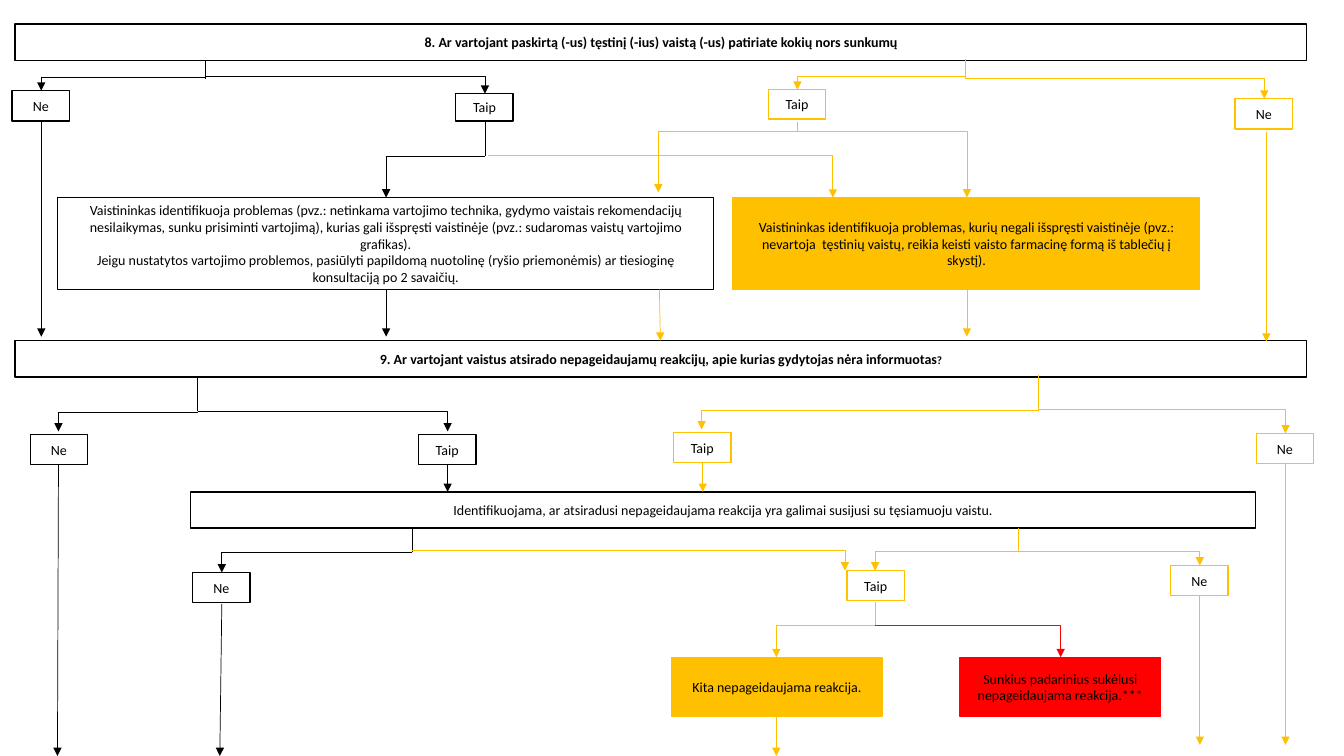
import pptx
import pptx.util
import pptx.dml.color
import pptx.enum.shapes
import pptx.enum.text
import pptx.oxml
import pptx.oxml.ns
from pptx.util import Inches

BLACK = pptx.dml.color.RGBColor(0x00, 0x00, 0x00)
WHITE = pptx.dml.color.RGBColor(0xFF, 0xFF, 0xFF)
AMBER = pptx.dml.color.RGBColor(0xFF, 0xC0, 0x00)
RED = pptx.dml.color.RGBColor(0xFF, 0x00, 0x00)

presentation = pptx.Presentation()
presentation.slide_width = Inches(13.33)
presentation.slide_height = Inches(7.5)
slide = presentation.slides.add_slide(presentation.slide_layouts[6])


def add_box(text, left, top, width, height, border, fill=WHITE, bold=False):
    shape = slide.shapes.add_shape(
        pptx.enum.shapes.MSO_SHAPE.RECTANGLE,
        Inches(left), Inches(top), Inches(width), Inches(height))
    shape.shadow.inherit = False
    shape.fill.solid()
    shape.fill.fore_color.rgb = fill
    shape.line.color.rgb = border
    shape.line.width = pptx.util.Pt(1)
    frame = shape.text_frame
    frame.word_wrap = True
    frame.vertical_anchor = pptx.enum.text.MSO_ANCHOR.MIDDLE
    frame.text = text
    for paragraph in frame.paragraphs:
        paragraph.alignment = pptx.enum.text.PP_ALIGN.CENTER
        paragraph.font.name = "Calibri"
        paragraph.font.size = pptx.util.Pt(10)
        paragraph.font.bold = bold
        paragraph.font.color.rgb = BLACK
    return shape


def add_link(color, x1, y1, x2, y2, arrow=True, corner=False):
    kinds = pptx.enum.shapes.MSO_CONNECTOR
    connector = slide.shapes.add_connector(
        kinds.ELBOW if corner else kinds.STRAIGHT,
        Inches(x1), Inches(y1), Inches(x2), Inches(y2))
    connector.line.color.rgb = color
    connector.line.width = pptx.util.Pt(0.5)
    properties = connector._element.spPr
    if corner:  # one turn: across, then down
        properties.find(pptx.oxml.ns.qn("a:prstGeom")).set("prst", "bentConnector2")
    if arrow:
        tail = pptx.oxml.parse_xml(
            f'<a:tailEnd {pptx.oxml.ns.nsdecls("a")} type="triangle"/>')
        connector.line._get_or_add_ln().append(tail)
    properties.append(pptx.oxml.parse_xml(
        f'<a:effectLst {pptx.oxml.ns.nsdecls("a")}/>'))


# Question bars
add_box("8. Ar vartojant paskirtą (-us) tęstinį (-ius) vaistą (-us) patiriate kokių nors sunkumų",
        0.15, 0.24, 12.81, 0.36, BLACK, bold=True)
question_9 = add_box(
    "9. Ar vartojant vaistus atsirado nepageidaujamų reakcijų, apie kurias gydytojas nėra informuotas",
    0.15, 3.38, 12.81, 0.36, BLACK, bold=True)
question_mark = question_9.text_frame.paragraphs[0].add_run()
question_mark.text = "?"
question_mark.font.size = pptx.util.Pt(8)
add_box("Identifikuojama, ar atsiradusi nepageidaujama reakcija yra galimai susijusi su tęsiamuoju vaistu.",
        1.89, 4.88, 10.56, 0.36, BLACK)

# Pharmacist actions and outcomes
add_box("Vaistininkas identifikuoja problemas (pvz.: netinkama vartojimo technika, gydymo vaistais "
        "rekomendacijų nesilaikymas, sunku prisiminti vartojimą), kurias gali išspręsti vaistinėje "
        "(pvz.: sudaromas vaistų vartojimo grafikas).\n"
        "Jeigu nustatytos vartojimo problemos, pasiūlyti papildomą nuotolinę (ryšio priemonėmis) "
        "ar tiesioginę konsultaciją po 2 savaičių.",
        0.57, 1.96, 6.51, 0.91, BLACK)
add_box("Vaistininkas identifikuoja problemas, kurių negali išspręsti vaistinėje (pvz.: nevartoja  "
        "tęstinių vaistų, reikia keisti vaisto farmacinę formą iš tablečių į skystį).",
        7.27, 1.96, 4.63, 0.91, AMBER, AMBER)
add_box("Kita nepageidaujama reakcija.", 6.66, 6.52, 2.09, 0.59, AMBER, AMBER)
add_box("Sunkius padarinius sukėlusi nepageidaujama reakcija.***",
        9.52, 6.52, 1.99, 0.59, RED, RED)

# Yes / no answers
answers = [
    ("Ne", 0.12, 0.9, 0.3, BLACK), ("Taip", 4.52, 0.93, 0.27, BLACK),
    ("Taip", 7.62, 0.89, 0.29, AMBER), ("Ne", 12.25, 0.98, 0.3, AMBER),
    ("Ne", 0.3, 4.31, 0.3, BLACK), ("Taip", 4.15, 4.31, 0.3, BLACK),
    ("Taip", 6.68, 4.29, 0.3, AMBER), ("Ne", 12.46, 4.3, 0.3, AMBER),
    ("Ne", 1.91, 5.68, 0.3, BLACK), ("Taip", 8.4, 5.66, 0.3, AMBER),
    ("Ne", 11.61, 5.61, 0.3, AMBER),
]
for text, left, top, height, border in answers:
    add_box(text, left, top, 0.57, height, border)

# Plain stems: colour, x, top, bottom
stems = [
    (BLACK, 2.04, 0.6, 0.78), (AMBER, 9.57, 0.59, 0.78),
    (BLACK, 4.81, 1.2, 1.55), (AMBER, 7.91, 1.21, 1.31),
    (BLACK, 1.96, 3.75, 4.08), (AMBER, 10.3, 3.72, 4.08),
    (BLACK, 4.09, 5.24, 5.48), (AMBER, 10.1, 5.24, 5.48),
    (AMBER, 8.68, 5.97, 6.2),
]
for color, x, top, bottom in stems:
    add_link(color, x, top, x, bottom, arrow=False)

# Straight arrows: colour, start, end
arrows = [
    (BLACK, 0.41, 1.21, 0.41, 3.34), (AMBER, 12.56, 1.31, 12.56, 3.39),
    (BLACK, 3.83, 2.87, 3.83, 3.34), (AMBER, 6.54, 2.87, 6.55, 3.38),
    (AMBER, 9.59, 2.87, 9.59, 3.34), (BLACK, 4.44, 4.61, 4.44, 4.88),
    (AMBER, 6.97, 4.59, 6.97, 4.88), (BLACK, 0.58, 4.61, 0.57, 7.5),
    (BLACK, 2.2, 5.99, 2.18, 7.5), (AMBER, 7.7, 7.11, 7.7, 7.5),
    (AMBER, 11.9, 5.91, 11.9, 7.39), (AMBER, 12.75, 4.59, 12.75, 7.39),
]
for arrow in arrows:
    add_link(*arrow)

# Branches that turn once: colour, start, end
branches = [
    (BLACK, 2.04, 0.77, 0.41, 0.9), (BLACK, 2.04, 0.76, 4.81, 0.93),
    (AMBER, 9.57, 0.76, 7.91, 0.89), (AMBER, 9.57, 0.78, 12.54, 0.98),
    (BLACK, 4.81, 1.55, 3.83, 1.96), (AMBER, 4.84, 1.54, 8.26, 1.96),
    (AMBER, 7.95, 1.3, 6.53, 1.91), (AMBER, 7.89, 1.3, 9.59, 1.96),
    (BLACK, 1.96, 4.09, 0.58, 4.28), (BLACK, 1.96, 4.08, 4.44, 4.28),
    (AMBER, 10.3, 4.07, 6.96, 4.26), (AMBER, 10.3, 4.06, 12.75, 4.3),
    (BLACK, 4.09, 5.48, 2.2, 5.68), (AMBER, 4.09, 5.46, 8.38, 5.66),
    (AMBER, 10.1, 5.47, 8.68, 5.66), (AMBER, 10.1, 5.47, 11.9, 5.61),
    (AMBER, 8.68, 6.2, 7.7, 6.52), (RED, 8.68, 6.2, 10.52, 6.52),
]
for branch in branches:
    add_link(*branch, corner=True)

presentation.save("out.pptx")
